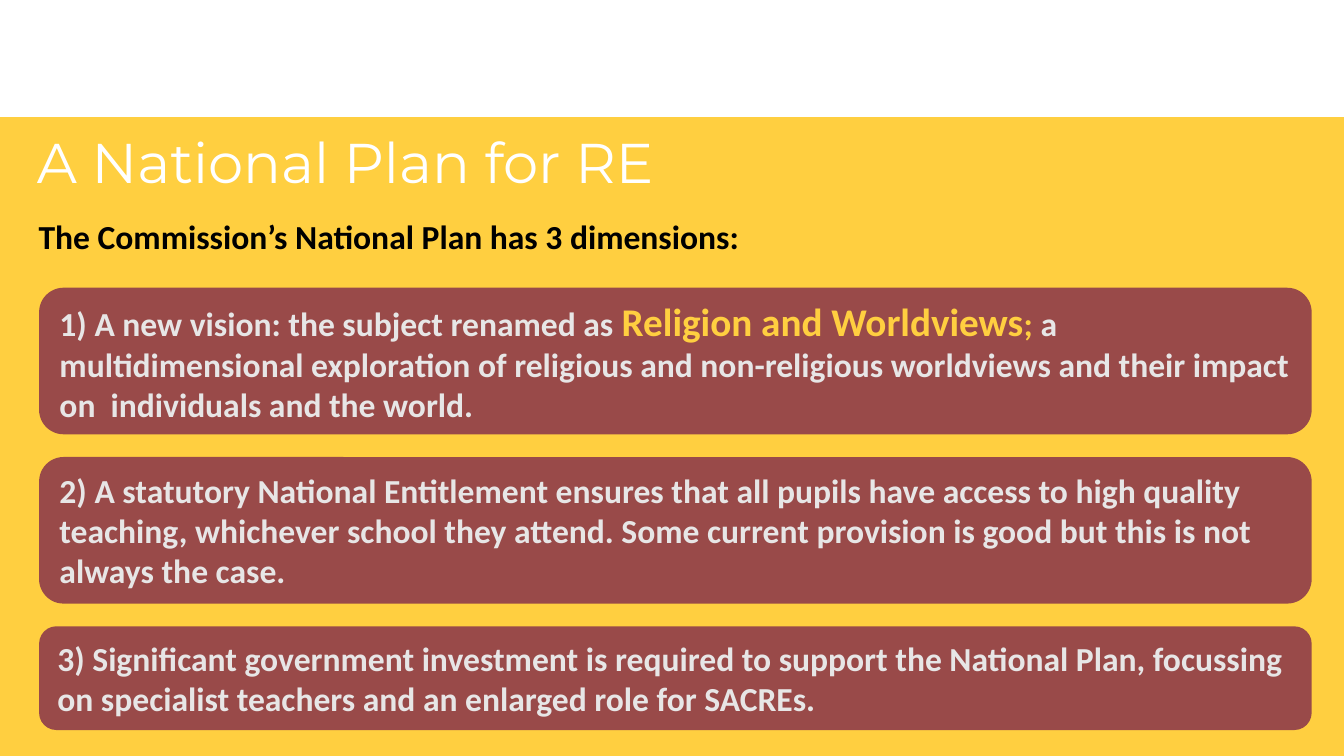
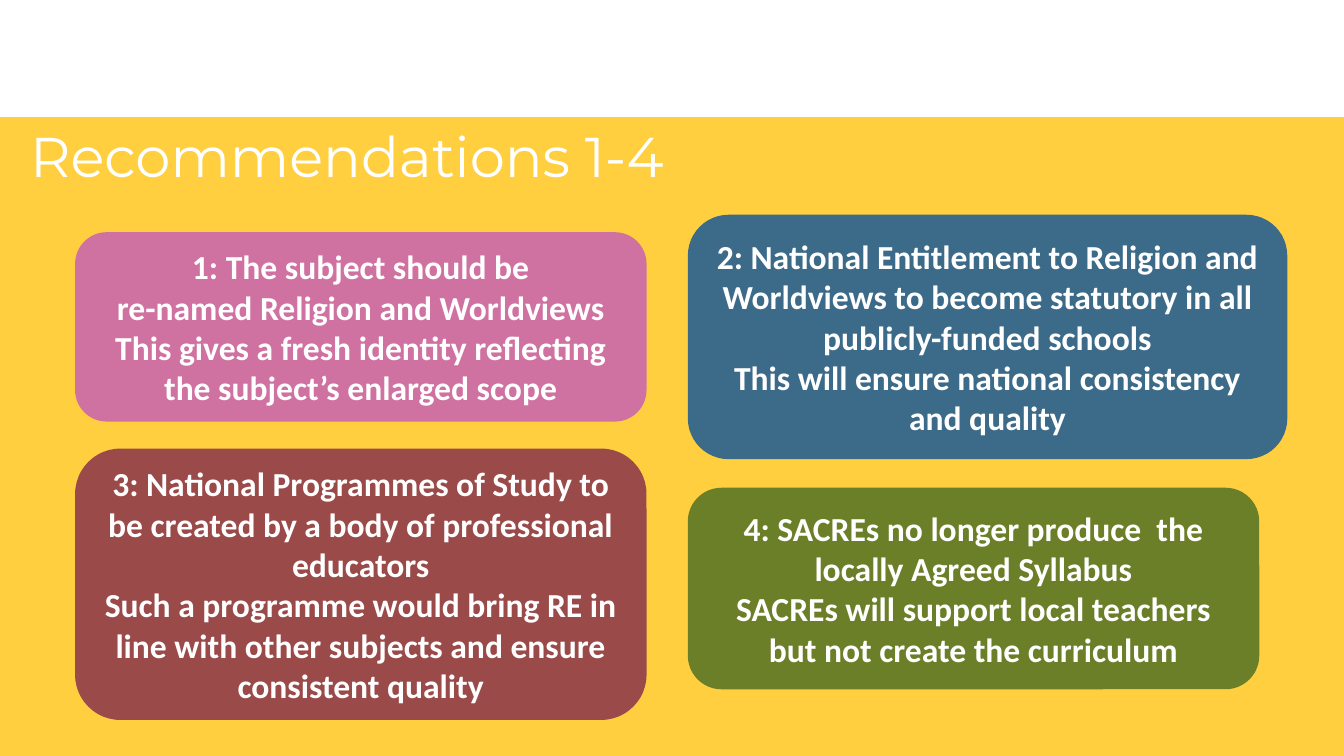
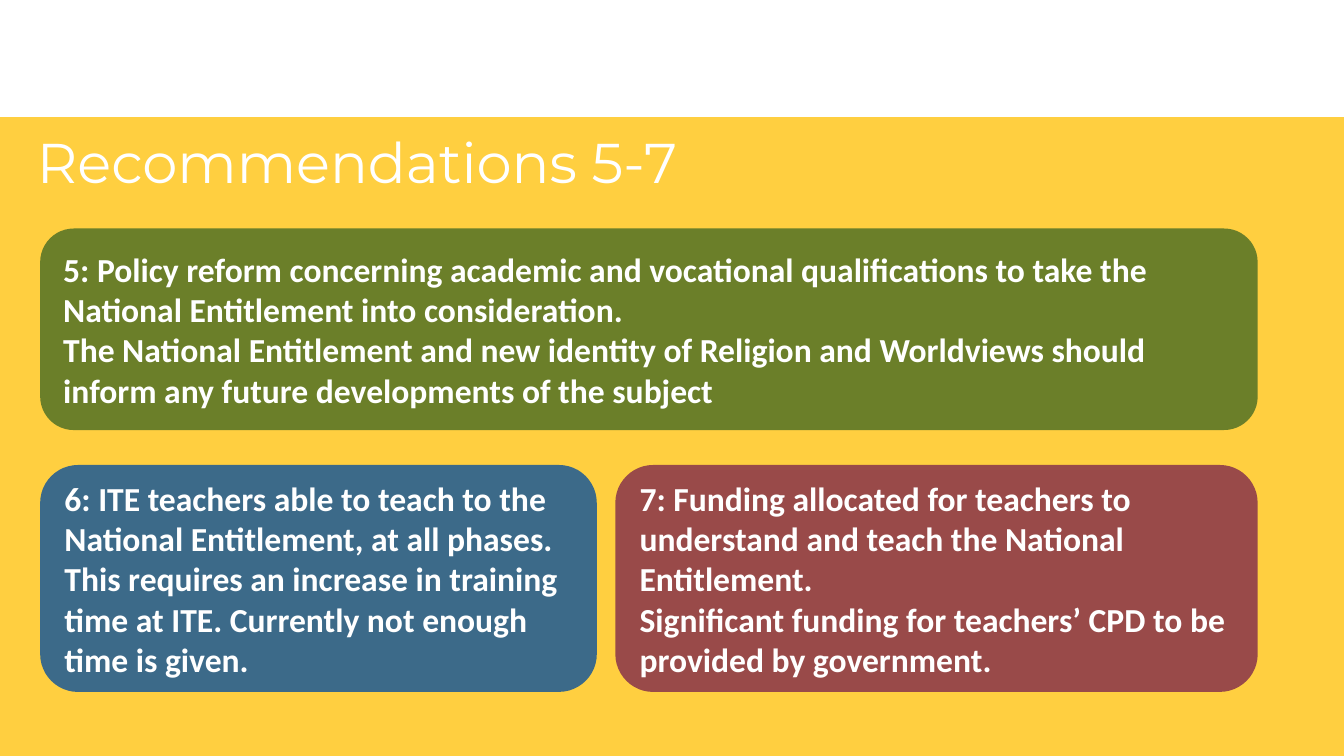
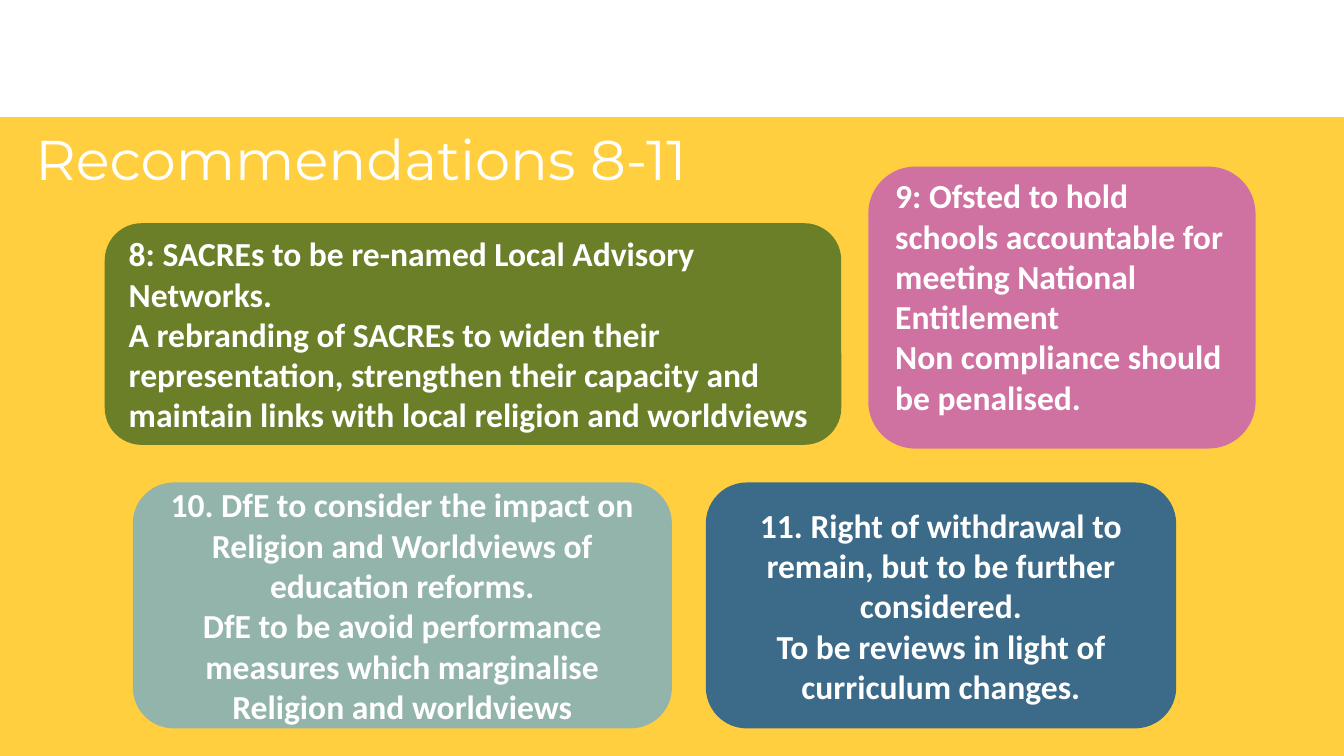
from dataclasses import dataclass, field
from typing import Any

from pptx import Presentation
from pptx.dml.color import RGBColor
from pptx.enum.shapes import MSO_SHAPE
from pptx.enum.text import MSO_ANCHOR, MSO_AUTO_SIZE, PP_ALIGN
from pptx.util import Cm, Pt

# Colours
YELLOW = RGBColor(0xFF, 0xCF, 0x40)
WHITE = RGBColor(0xFF, 0xFF, 0xFF)
BLACK = RGBColor(0x00, 0x00, 0x00)
PALE_GREY = RGBColor(0xE7, 0xE6, 0xE6)
RED = RGBColor(0x99, 0x4A, 0x49)
PINK = RGBColor(0xD0, 0x72, 0xA1)
BLUE = RGBColor(0x3C, 0x6A, 0x89)
GREEN = RGBColor(0x6B, 0x7F, 0x29)
SAGE = RGBColor(0x93, 0xB4, 0xAB)

# Text formats
TITLE_FONT = {"name": "Montserrat", "size": Pt(30)}
BODY_FONT = {"name": "Calibri", "size": Pt(18), "bold": True}
TITLE_FRAME = {"margin_left": Cm(0.19), "margin_right": Cm(0.19),
               "margin_top": Cm(0.1), "margin_bottom": Cm(0.1)}


@dataclass(frozen=True)
class Run:
    text: str
    color: RGBColor = WHITE
    font: dict[str, Any] = field(default_factory=lambda: BODY_FONT)


@dataclass(frozen=True)
class Box:
    """Position and size in centimetres."""
    left: float
    top: float
    width: float
    height: float

    def lengths(self) -> tuple[Cm, Cm, Cm, Cm]:
        return Cm(self.left), Cm(self.top), Cm(self.width), Cm(self.height)


@dataclass(frozen=True)
class Card:
    box: Box
    fill: RGBColor
    paragraphs: list[list[Run]]
    align: PP_ALIGN = PP_ALIGN.LEFT
    margin_bottom: float = 0.13


@dataclass(frozen=True)
class Page:
    title: str
    title_box: Box
    cards: list[Card]
    intro: str = ""


def lines(*texts: str, color: RGBColor = WHITE) -> list[list[Run]]:
    return [[Run(text, color)] for text in texts]


def set_all(target: Any, values: dict[str, Any]) -> None:
    for name, value in values.items():
        setattr(target, name, value)


def write(tf: Any, paragraphs: list[list[Run]], align: PP_ALIGN = PP_ALIGN.LEFT) -> None:
    tf.word_wrap = True
    for i, runs in enumerate(paragraphs):
        p = tf.add_paragraph() if i else tf.paragraphs[0]
        p.alignment = align
        for run in runs:
            r = p.add_run()
            r.text = run.text
            set_all(r.font, run.font)
            r.font.color.rgb = run.color


def add_panel(s: Any, shape: MSO_SHAPE, box: Box, fill: RGBColor) -> Any:
    sp = s.shapes.add_shape(shape, *box.lengths())
    sp.shadow.inherit = False
    sp.fill.solid()
    sp.fill.fore_color.rgb = fill
    sp.line.fill.background()
    return sp


def add_title(s: Any, text: str, box: Box) -> None:
    tf = s.shapes.add_textbox(*box.lengths()).text_frame
    set_all(tf, TITLE_FRAME)
    write(tf, [[Run(text, WHITE, TITLE_FONT)]])
    tf.paragraphs[0].line_spacing = 0.9


def add_intro(s: Any, text: str) -> None:
    tf = s.shapes.add_textbox(*INTRO_BOX.lengths()).text_frame
    write(tf, lines(text, color=BLACK))
    tf.auto_size = MSO_AUTO_SIZE.SHAPE_TO_FIT_TEXT


def add_card(s: Any, card: Card) -> None:
    tf = add_panel(s, MSO_SHAPE.ROUNDED_RECTANGLE, card.box, card.fill).text_frame
    set_all(tf, {"vertical_anchor": MSO_ANCHOR.MIDDLE,
                 "margin_bottom": Cm(card.margin_bottom)})
    write(tf, card.paragraphs, card.align)


# Shared layout
BAND_BOX = Box(0, -0.05, 25.4, 2.26)
INTRO_BOX = Box(0.48, 3.96, 18.47, 1.02)
CENTER = PP_ALIGN.CENTER

# National Plan: three stacked dimensions
PLAN_TOP, PLAN_STEP = 5.44, 3.2
DIMENSIONS = [
    [[Run("1) A new vision: the subject renamed as ", PALE_GREY),
      Run("Religion and Worldviews", YELLOW, BODY_FONT | {"size": Pt(21)}),
      Run("; ", YELLOW),
      Run("a multidimensional exploration of religious and non-religious worldviews "
          "and their impact on  individuals and the world.", PALE_GREY)]],
    lines("2) A statutory National Entitlement ensures that all pupils have access to high "
          "quality teaching, whichever school they attend. Some current provision is good "
          "but this is not always the case.", color=PALE_GREY),
    lines("3) Significant government investment is required to support the National Plan, "
          "focussing on specialist teachers and an enlarged role for SACREs.",
          color=PALE_GREY),
]
DIMENSION_HEIGHTS = [2.77, 2.77, 1.96]

PAGES = [
    Page("A National Plan for RE", Box(0.51, 2.46, 19.05, 1.07), [
        Card(Box(0.74, PLAN_TOP + i * PLAN_STEP, 24.05, height), RED, text)
        for i, (text, height) in enumerate(zip(DIMENSIONS, DIMENSION_HEIGHTS))
    ], intro="The Commission’s National Plan has 3 dimensions:"),

    Page("Recommendations 1-4", Box(0.38, 2.34, 19.05, 1.52), [
        Card(Box(1.42, 4.39, 10.8, 3.58), PINK, lines(
            "1: The subject should be",
            "re-named Religion and Worldviews",
            "This gives a fresh identity reflecting the subject’s enlarged scope"), CENTER),
        Card(Box(1.42, 8.48, 10.8, 5.13), RED, lines(
            "3: National Programmes of Study to be created by a body of professional educators",
            "Such a programme would bring RE in line with other subjects and ensure "
            "consistent quality"), CENTER),
        Card(Box(13, 4.06, 11.33, 4.62), BLUE, lines(
            "2: National Entitlement to Religion and Worldviews to become statutory in all "
            "publicly-funded schools",
            "This will ensure national consistency and quality"), CENTER),
        Card(Box(13, 9.22, 10.8, 3.81), GREEN, lines(
            "4: SACREs no longer produce  the locally Agreed Syllabus",
            "SACREs will support local teachers but not create the curriculum"), CENTER),
    ]),

    Page("Recommendations 5-7", Box(0.51, 2.46, 19.05, 1.52), [
        Card(Box(0.76, 4.32, 23.01, 3.81), GREEN, lines(
            "5: Policy reform concerning academic and vocational qualifications to take the "
            "National Entitlement into consideration.",
            "The National Entitlement and new identity of Religion and Worldviews should "
            "inform any future developments of the subject")),
        Card(Box(0.76, 8.79, 10.52, 4.29), BLUE, lines(
            "6: ITE teachers able to teach to the National Entitlement, at all phases.",
            "This requires an increase in training time at ITE. Currently not enough time "
            "is given.")),
        Card(Box(11.63, 8.79, 12.14, 4.29), RED, lines(
            "7: Funding allocated for teachers to understand and teach the National "
            "Entitlement.",
            "Significant funding for teachers’ CPD to be provided by government.")),
    ]),

    Page("Recommendations 8-11", Box(0.48, 2.39, 19.05, 1.52), [
        Card(Box(1.98, 4.22, 13.92, 4.19), GREEN, lines(
            "8: SACREs to be re-named Local Advisory Networks.",
            "A rebranding of SACREs to widen their representation, strengthen their capacity "
            "and maintain links with local religion and worldviews")),
        Card(Box(2.51, 9.12, 10.19, 4.65), SAGE, lines(
            "10. DfE to consider the impact on Religion and Worldviews of education reforms.",
            "DfE to be avoid performance measures which marginalise Religion and "
            "worldviews"), CENTER),
        Card(Box(16.41, 3.15, 7.32, 5.33), PINK, lines(
            "9: Ofsted to hold schools accountable for meeting National Entitlement",
            "Non compliance should be penalised."), margin_bottom=0.56),
        Card(Box(13.34, 9.12, 8.89, 4.65), BLUE, lines(
            "11. Right of withdrawal to remain, but to be further considered.",
            "To be reviews in light of curriculum changes."), CENTER),
    ]),
]


def add_page(prs: Any, page: Page) -> None:
    s = prs.slides.add_slide(prs.slide_layouts[6])
    add_panel(s, MSO_SHAPE.RECTANGLE, BAND_BOX, WHITE)
    add_title(s, page.title, page.title_box)
    for card in page.cards:
        add_card(s, card)
    if page.intro:
        add_intro(s, page.intro)


def main() -> None:
    prs = Presentation()
    prs.slide_width, prs.slide_height = Cm(25.4), Cm(14.29)
    background = prs.slide_master.background.fill
    background.solid()
    background.fore_color.rgb = YELLOW
    for page in PAGES:
        add_page(prs, page)
    prs.save("out.pptx")


if __name__ == "__main__":
    main()
